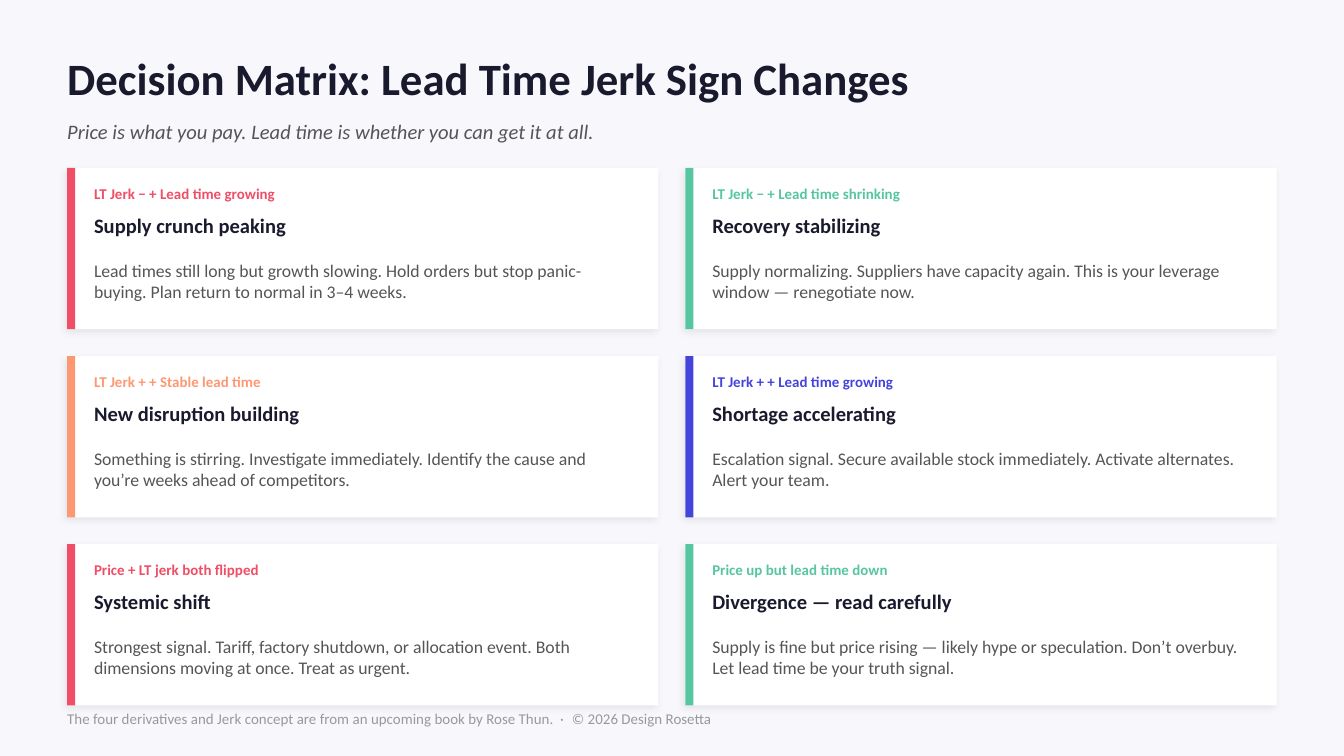
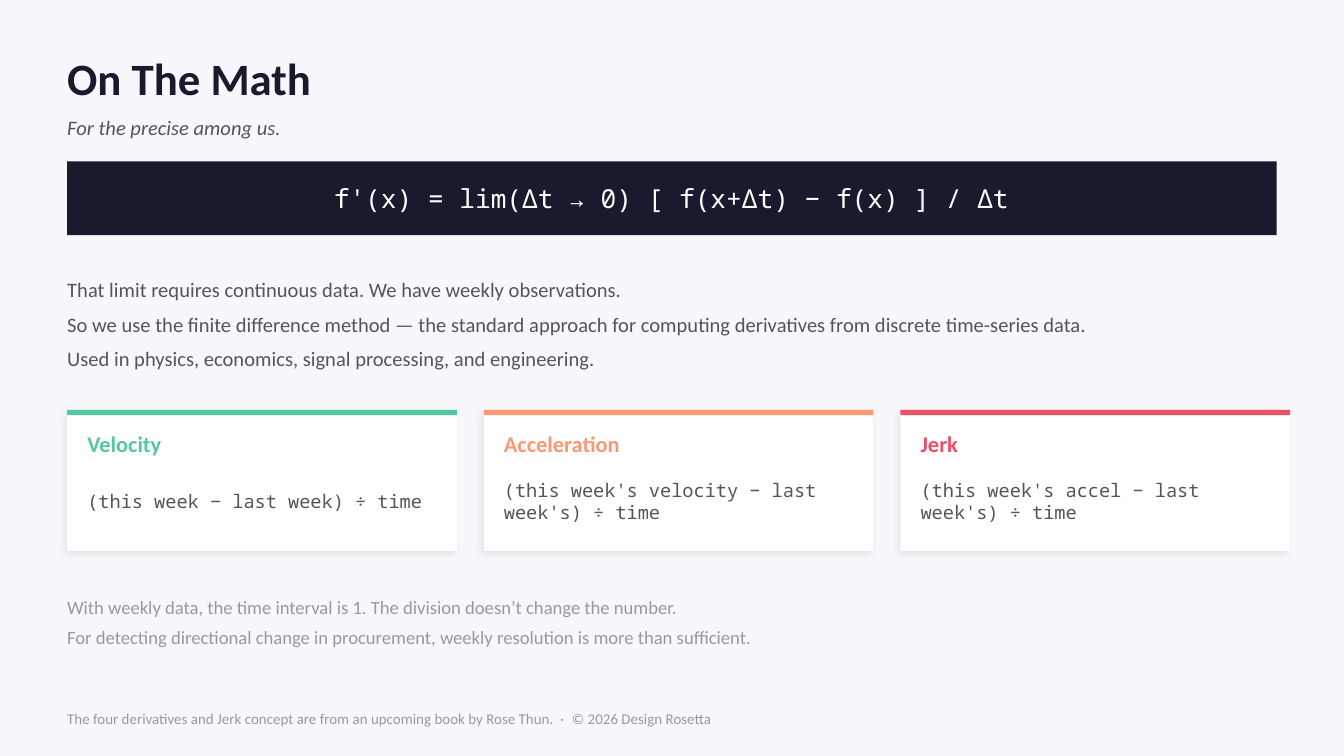
from dataclasses import dataclass

from lxml.etree import SubElement
from pptx import Presentation
from pptx.dml.color import RGBColor
from pptx.enum.shapes import MSO_SHAPE
from pptx.enum.text import MSO_ANCHOR, MSO_AUTO_SIZE, PP_ALIGN
from pptx.oxml.ns import qn
from pptx.util import Emu, Pt

PX = 4572  # 200 px to the inch


@dataclass(frozen=True)
class Theme:
    background: str = "F8F8FC"
    ink: str = "1A1A2E"
    text: str = "555555"
    muted: str = "999999"
    white: str = "FFFFFF"
    red: str = "EF4E66"
    green: str = "56C6A1"
    orange: str = "FD9872"
    blue: str = "4444DD"
    shadow: str = "000000"
    font: str = "Calibri"
    mono: str = "Noto Sans Mono"
    title_size: float = 24
    formula_size: float = 14
    term_size: float = 12
    body_size: float = 11
    note_size: float = 10
    advice_size: float = 9.5
    small_size: float = 8


theme = Theme()


def add_rectangle(slide, left, top, width, height, colour, shadow=False):
    shape = slide.shapes.add_shape(
        MSO_SHAPE.RECTANGLE, *(Emu(n * PX) for n in (left, top, width, height)))
    shape.fill.solid()
    shape.fill.fore_color.rgb = RGBColor.from_string(colour)
    shape.line.fill.background()
    shape.shadow.inherit = False
    if shadow:
        effects = shape._element.spPr.find(qn("a:effectLst"))
        outer = SubElement(effects, qn("a:outerShdw"), blurRad=str(Pt(4)), dist=str(Pt(2)),
                           dir=str(135 * 60000), algn="bl", rotWithShape="0")
        tone = SubElement(outer, qn("a:srgbClr"), val=theme.shadow)
        SubElement(tone, qn("a:alpha"), val="8000")
    return shape


def write_text(target, box, paragraphs, size, colour, font=theme.font, bold=False,
               italic=False, align=PP_ALIGN.LEFT, spacing=1.0):
    """Write paragraphs, each a tuple of runs, in a shape, or in a new text box on a slide."""
    bounds = [Emu(n * PX) for n in box]
    if hasattr(target, "shapes"):
        shape = target.shapes.add_textbox(*bounds)
    else:
        shape = target
        shape.left, shape.top, shape.width, shape.height = bounds
    frame = shape.text_frame
    frame.word_wrap = True
    frame.auto_size = MSO_AUTO_SIZE.NONE
    frame.vertical_anchor = MSO_ANCHOR.MIDDLE
    frame.margin_left = frame.margin_top = frame.margin_right = frame.margin_bottom = 0
    for index, runs in enumerate(paragraphs):
        paragraph = frame.add_paragraph() if index else frame.paragraphs[0]
        paragraph.alignment = align
        paragraph.line_spacing = spacing
        paragraph.space_before = Pt(0)
        if shape.is_placeholder:
            properties = paragraph._p.get_or_add_pPr()
            properties.set("marL", "0")
            properties.set("indent", "0")
            SubElement(properties, qn("a:buNone"))
        for text in runs:
            run = paragraph.add_run()
            run.text = text
            run.font.name = font
            run.font.size = Pt(size)
            run.font.bold = bold
            run.font.italic = italic
            run.font.color.rgb = RGBColor.from_string(colour)
    return frame


presentation = Presentation()
presentation.slide_width = Emu(2000 * PX)
presentation.slide_height = Emu(1125 * PX)
master_fill = presentation.slide_master.background.fill
master_fill.solid()
master_fill.fore_color.rgb = RGBColor.from_string(theme.background)

MARGIN, CONTENT_WIDTH = 100, 1800
TITLE_ONLY, TITLE_AND_BODY = 5, 1

headings = [
    (TITLE_ONLY, "Decision Matrix: Lead Time Jerk Sign Changes",
     "Price is what you pay. Lead time is whether you can get it at all.", 70),
    (TITLE_AND_BODY, "On The Math", "For the precise among us.", 60),
]
for layout, title, subtitle, subtitle_height in headings:
    slide = presentation.slides.add_slide(presentation.slide_layouts[layout])
    write_text(slide.shapes.title, (MARGIN, 60, CONTENT_WIDTH, 110), [(title,)],
               theme.title_size, theme.ink, bold=True)
    write_text(slide, (MARGIN, 160, CONTENT_WIDTH, subtitle_height), [(subtitle,)],
               theme.body_size, theme.text, italic=True)
matrix_slide, math_slide = presentation.slides

# Decision matrix: two columns of signal cards
signals = [
    (theme.red, "LT Jerk − + Lead time growing", "Supply crunch peaking",
     "Lead times still long but growth slowing. Hold orders but stop panic-buying. "
     "Plan return to normal in 3–4 weeks."),
    (theme.green, "LT Jerk − + Lead time shrinking", "Recovery stabilizing",
     "Supply normalizing. Suppliers have capacity again. "
     "This is your leverage window — renegotiate now."),
    (theme.orange, "LT Jerk + + Stable lead time", "New disruption building",
     "Something is stirring. Investigate immediately. "
     "Identify the cause and you’re weeks ahead of competitors."),
    (theme.blue, "LT Jerk + + Lead time growing", "Shortage accelerating",
     "Escalation signal. Secure available stock immediately. "
     "Activate alternates. Alert your team."),
    (theme.red, "Price + LT jerk both flipped", "Systemic shift",
     "Strongest signal. Tariff, factory shutdown, or allocation event. "
     "Both dimensions moving at once. Treat as urgent."),
    (theme.green, "Price up but lead time down", "Divergence — read carefully",
     "Supply is fine but price rising — likely hype or speculation. "
     "Don’t overbuy. Let lead time be your truth signal."),
]
card_width, card_height, gap = 880, 240, 40
for index, (accent, signal, meaning, advice) in enumerate(signals):
    row, column = divmod(index, 2)
    left = MARGIN + column * (card_width + gap)
    top = 250 + row * (card_height + gap)
    add_rectangle(matrix_slide, left, top, card_width, card_height, theme.white, shadow=True)
    add_rectangle(matrix_slide, left, top, 12, card_height, accent)
    write_text(matrix_slide, (left + 40, top + 16, 800, 44), [(signal,)],
               theme.small_size, accent, bold=True)
    write_text(matrix_slide, (left + 40, top + 60, 800, 50), [(meaning,)],
               theme.body_size, theme.ink, bold=True)
    write_text(matrix_slide, (left + 40, top + 116, 800, 104), [(advice,)],
               theme.advice_size, theme.text)

# Math: formula band, explanation, three definitions, closing note
band_box = (MARGIN, 240, CONTENT_WIDTH, 110)
band = add_rectangle(math_slide, *band_box, theme.ink)
write_text(band, band_box, [("f'(x) = lim(Δt → 0) [ f(x+Δt) − f(x) ] / Δt",)],
           theme.formula_size, theme.white, font=theme.mono, align=PP_ALIGN.CENTER)

write_text(math_slide.placeholders[1], (MARGIN, 390, CONTENT_WIDTH, 170), [
    ("That limit requires continuous data. We have weekly observations.",),
    ("So we use the finite difference method — the standard approach for computing "
     "derivatives from discrete time-series data.",),
    ("Used in physics, economics, signal processing, and engineering.",),
], theme.body_size, theme.text, spacing=1.4)

definitions = [
    (theme.green, "Velocity", "(this week − last week) ÷ time"),
    (theme.orange, "Acceleration", "(this week's velocity − last week's) ÷ time"),
    (theme.red, "Jerk", "(this week's accel − last week's) ÷ time"),
]
card_width, card_height, top = 580, 210, 610
for index, (accent, term, formula) in enumerate(definitions):
    left = MARGIN + index * (card_width + gap)
    add_rectangle(math_slide, left, top, card_width, card_height, theme.white, shadow=True)
    add_rectangle(math_slide, left, top, card_width, 8, accent)
    write_text(math_slide, (left + 30, top + 20, 520, 60), [(term,)],
               theme.term_size, accent, bold=True)
    write_text(math_slide, (left + 30, top + 86, 520, 100), [(formula,)],
               theme.note_size, theme.text, font=theme.mono)

write_text(math_slide, (MARGIN, 860, CONTENT_WIDTH, 120), [
    ("With weekly data, the time interval is 1. The division doesn’t change the number.",),
    ("For detecting directional change in procurement, weekly resolution is more than "
     "sufficient.",),
], theme.note_size, theme.muted, spacing=1.35)

# Footer, with the separator dot spaced out
credit = ("The four derivatives and Jerk concept are from an upcoming book by Rose Thun.",
          " · ", "© 2026 Design Rosetta")
for slide in presentation.slides:
    footer = write_text(slide, (MARGIN, 1040, CONTENT_WIDTH, 60), [credit],
                        theme.small_size, theme.muted)
    separator = footer.paragraphs[0].runs[1]
    separator._r.get_or_add_rPr().set("spc", "120")

presentation.save("out.pptx")
